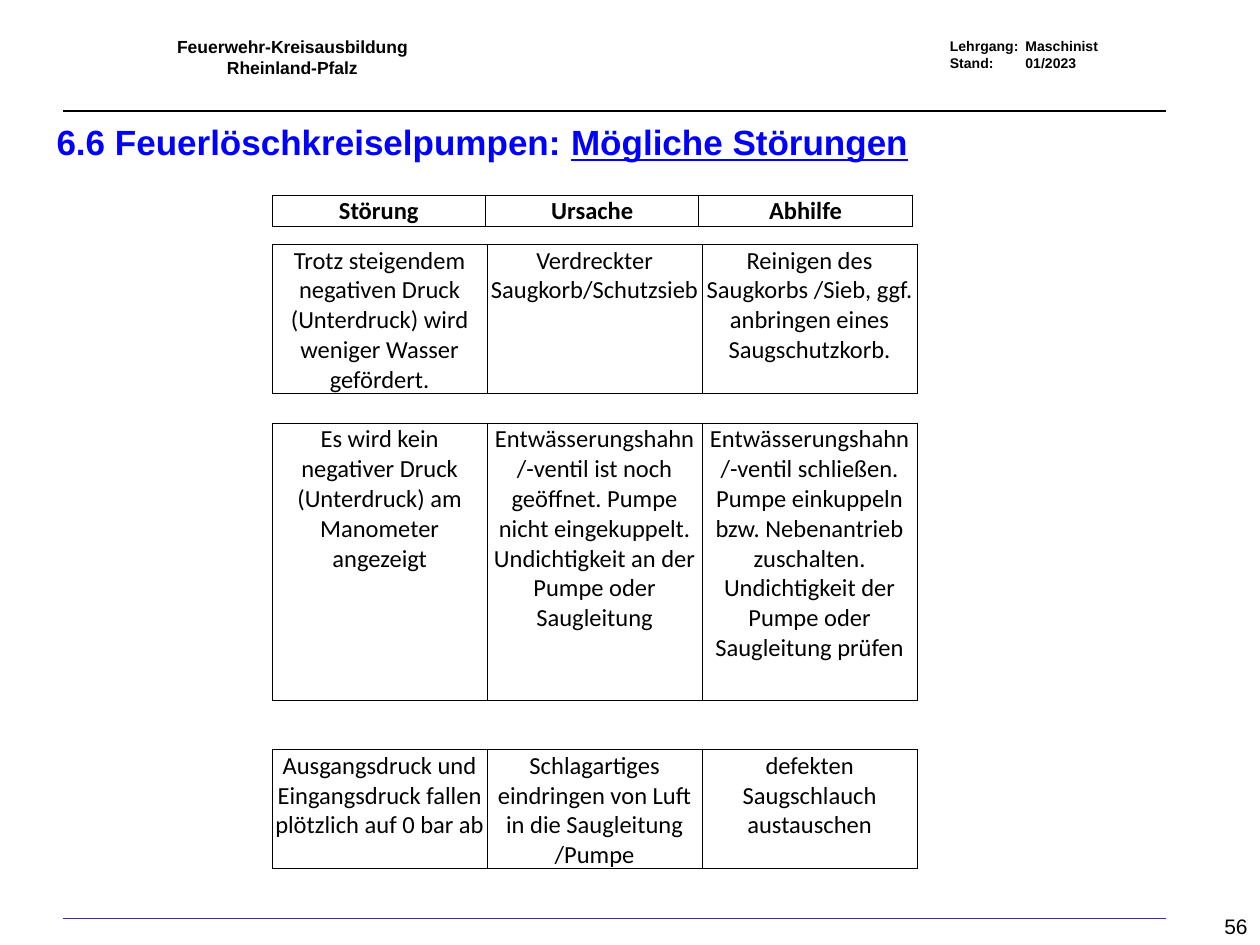
from lxml.etree import SubElement
from pptx import Presentation
from pptx.dml.color import RGBColor
from pptx.enum.shapes import MSO_CONNECTOR as Line
from pptx.enum.text import MSO_ANCHOR as Anchor, PP_ALIGN as Align
from pptx.oxml.ns import qn
from pptx.util import Inches, Pt

BLACK = RGBColor(0, 0, 0)
BLUE = RGBColor(0, 0, 255)
NAVY = RGBColor(0x33, 0x33, 0x99)

COLS, ROWS = 100, 75
TABLE_LEFT, TABLE_WIDTH = 21.6, 51.2

FAULTS = [
    (19.4, 11.8, [
        "Trotz steigendem negativen Druck (Unterdruck) wird weniger Wasser gefördert.",
        "Verdreckter Saugkorb/Schutzsieb",
        "Reinigen des Saugkorbs /Sieb, ggf. anbringen eines Saugschutzkorb.",
    ]),
    (33.6, 22, [
        "Es wird kein negativer Druck (Unterdruck) am Manometer angezeigt",
        "Entwässerungshahn\n/-ventil ist noch geöffnet. Pumpe nicht eingekuppelt. "
        "Undichtigkeit an der Pumpe oder Saugleitung",
        "Entwässerungshahn\n/-ventil schließen. Pumpe einkuppeln bzw. Nebenantrieb "
        "zuschalten. Undichtigkeit der Pumpe oder Saugleitung prüfen",
    ]),
    (59.5, 9.4, [
        "Ausgangsdruck und Eingangsdruck fallen plötzlich auf 0 bar ab",
        "Schlagartiges eindringen von Luft in die Saugleitung /Pumpe",
        "defekten Saugschlauch austauschen",
    ]),
]


def write(tf, text, font="Arial", size=14, color=BLACK, bold=False,
          align=Align.LEFT, tab=None, underlined=""):
    """Fill a text frame, one paragraph per line, with an underlined ending."""
    for i, line in enumerate(text.split("\n")):
        p = tf.add_paragraph() if i else tf.paragraphs[0]
        p.alignment = align
        if tab:
            tabs = SubElement(p._p.get_or_add_pPr(), qn("a:tabLst"))
            SubElement(tabs, qn("a:tab"), pos=str(Inches(tab)), algn="l")
        for part, underline in ((line, None), (underlined, True)):
            if part:
                r = p.add_run()
                r.text = part
                r.font.name, r.font.size = font, Pt(size)
                r.font.bold, r.font.underline = bold, underline
                r.font.color.rgb = color


class Sheet:
    """Draws styled elements on one slide, placed on a grid."""

    def __init__(self, prs):
        self.s = prs.slides.add_slide(prs.slide_layouts[6])
        self.col = prs.slide_width / COLS
        self.row = prs.slide_height / ROWS

    def box(self, x, y, w, h):
        return [round(v) for v in (x * self.col, y * self.row, w * self.col, h * self.row)]

    def text(self, x, y, w, h, text, anchor=Anchor.TOP, wrap=True, **style):
        tf = self.s.shapes.add_textbox(*self.box(x, y, w, h)).text_frame
        tf.word_wrap, tf.vertical_anchor = wrap, anchor
        write(tf, text, **style)

    def rule(self, y, color):
        x1, y1, w, _ = self.box(5, y, 87.5, 0)
        sp = self.s.shapes.add_connector(Line.STRAIGHT, x1, y1, x1 + w, y1)
        sp.line.color.rgb, sp.line.width = color, Pt(1)
        SubElement(sp._element.spPr, qn("a:effectLst"))

    def table(self, y, w, h, texts, anchor=Anchor.TOP, bold=False):
        frame = self.s.shapes.add_table(1, len(texts), *self.box(TABLE_LEFT, y, w, h))
        table = frame.table
        table.first_row = table.horz_banding = False
        for cell, text in zip(table.rows[0].cells, texts):
            cell.margin_left = cell.margin_right = cell.margin_top = Inches(0.01)
            cell.margin_bottom = 0
            cell.vertical_anchor = anchor
            self.borders(cell)
            cell.fill.background()
            write(cell.text_frame, text, font="Calibri", bold=bold, align=Align.CENTER)

    def borders(self, cell):
        tc_pr = cell._tc.get_or_add_tcPr()
        for side in "LRTB":
            ln = SubElement(tc_pr, qn(f"a:ln{side}"), w=str(Pt(0.5)))
            SubElement(SubElement(ln, qn("a:solidFill")), qn("a:srgbClr"), val=str(BLACK))


def main():
    prs = Presentation()
    prs.slide_width, prs.slide_height = Inches(10), Inches(7.5)
    sheet = Sheet(prs)
    sheet.text(12.2, 2.4, 22, 4.4, "Feuerwehr-Kreisausbildung\nRheinland-Pfalz",
               size=10, bold=True, align=Align.CENTER)
    sheet.text(74.4, 2.5, 16.5, 5.4, "Lehrgang:\tMaschinist\nStand:\t01/2023",
               size=8, bold=True, tab=0.6)
    sheet.rule(8.8, BLACK)
    sheet.rule(72.9, NAVY)
    sheet.text(3.5, 9.1, 94.5, 3.5, "6.6 Feuerlöschkreiselpumpen: ", wrap=False,
               size=20, color=BLUE, bold=True, underlined="Mögliche Störungen")
    sheet.table(15.5, 50.8, 2.4, ["Störung", "Ursache", "Abhilfe"], Anchor.BOTTOM, bold=True)
    for y, h, texts in FAULTS:
        sheet.table(y, TABLE_WIDTH, h, texts)
    sheet.text(79.2, 70, 20.8, 5, "56", Anchor.BOTTOM, size=12, align=Align.RIGHT)
    prs.save("out.pptx")


if __name__ == "__main__":
    main()
